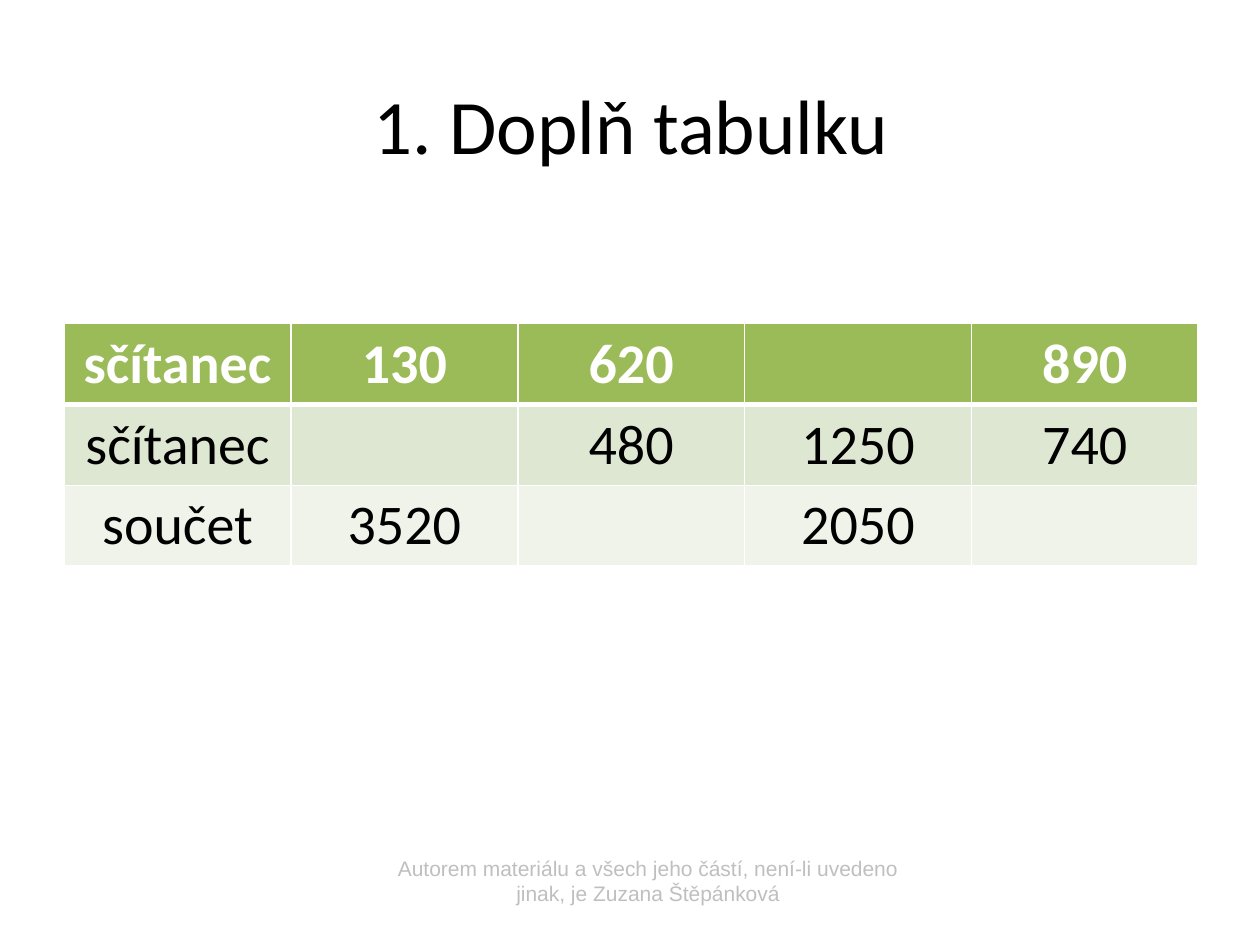
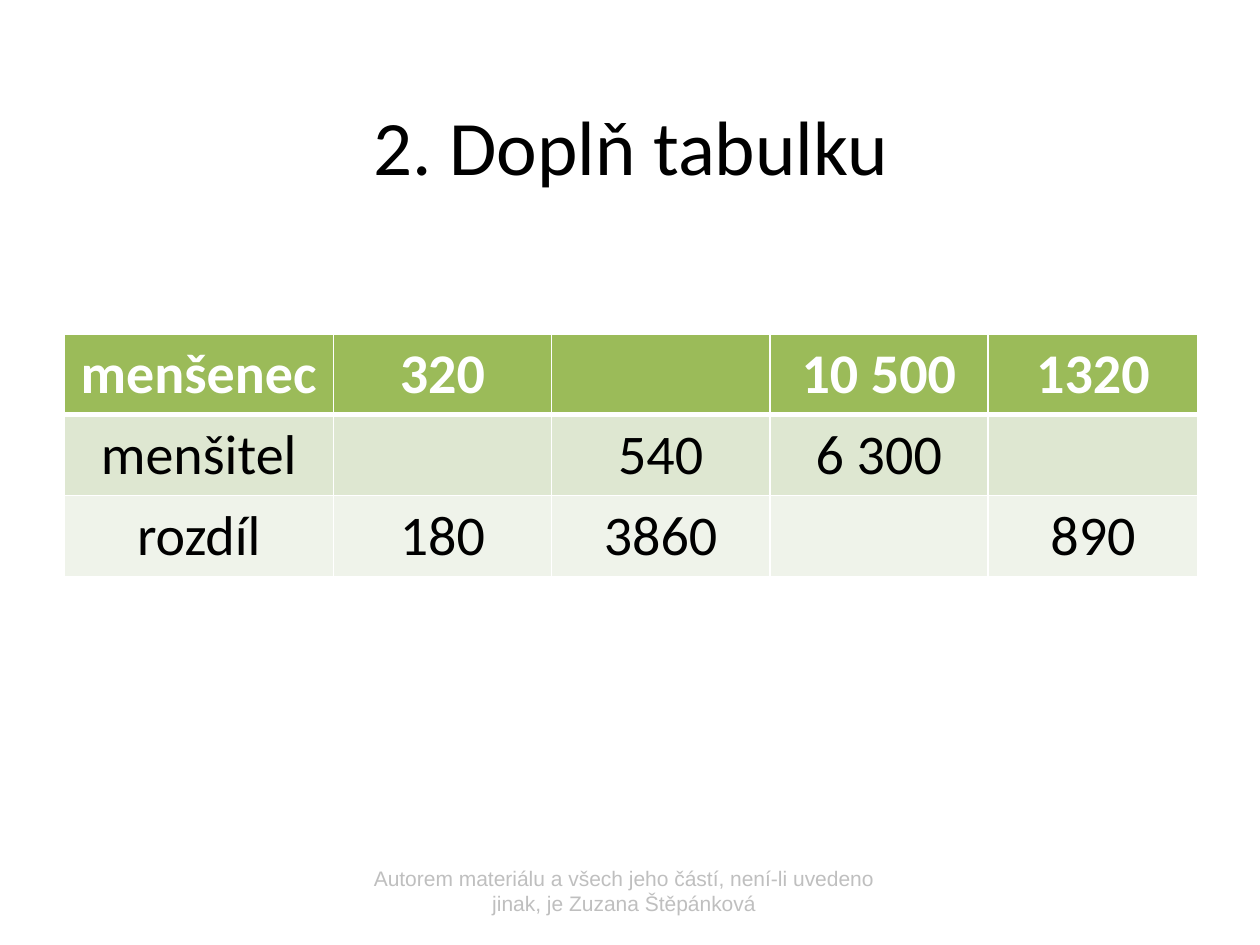
import pptx
import pptx.dml.color
import pptx.enum.text
import pptx.oxml
import pptx.oxml.ns
import pptx.util

Pt = pptx.util.Pt
PP_ALIGN = pptx.enum.text.PP_ALIGN
MSO_ANCHOR = pptx.enum.text.MSO_ANCHOR

LEFT, WIDTH = 36.7, 648
ROW_HEIGHT = 46.2
WHITE = "FFFFFF"
ROW_FILLS = ["9BBB59", "DEE7D1", "EFF3EA"]
TITLE = {"name": "Calibri", "size": Pt(44), "color": "000000"}
HEADER = {"name": "Calibri", "size": Pt(32), "bold": True, "color": WHITE}
BODY = {**HEADER, "bold": False, "color": "000000"}
FOOTER = {"name": "Arial", "size": Pt(12), "color": "BFBFBF"}
FOOTER_TEXT = ("Autorem materiálu a všech jeho částí, není-li uvedeno jinak, "
               "je Zuzana Štěpánková")


def rgb(value):
    return pptx.dml.color.RGBColor.from_string(value)


def write(tf, text, style):
    """Put one centred, formatted run in the text frame."""
    p = tf.paragraphs[0]
    p.alignment = PP_ALIGN.CENTER
    r = p.add_run()
    r.text = text
    for name, value in style.items():
        if name == "color":
            r.font.color.rgb = rgb(value)
        else:
            setattr(r.font, name, value)


def add_text(s, box, text, style, anchor=MSO_ANCHOR.TOP):
    tf = s.shapes.add_textbox(*map(Pt, box)).text_frame
    tf.word_wrap = True
    tf.vertical_anchor = anchor
    write(tf, text, style)


def add_border(cell, side, width):
    ns = pptx.oxml.ns.nsdecls("a")
    cell._tc.get_or_add_tcPr().append(pptx.oxml.parse_xml(
        f'<a:ln{side} {ns} w="{Pt(width)}"><a:solidFill>'
        f'<a:srgbClr val="{WHITE}"/></a:solidFill></a:ln{side}>'))


def add_number_table(s, top, widths, rows):
    """Draw the exercise table; an empty string is a cell to fill in."""
    table = s.shapes.add_table(len(rows), len(widths), Pt(LEFT), Pt(top),
                               Pt(WIDTH), Pt(ROW_HEIGHT * len(rows))).table
    for column, width in zip(table.columns, widths):
        column.width = Pt(width)
    for i, values in enumerate(rows):
        table.rows[i].height = Pt(ROW_HEIGHT)
        borders = {"L": 1, "R": 1, "T": 3 if i == 1 else 1, "B": 3 if i == 0 else 1}
        for j, value in enumerate(values):
            cell = table.cell(i, j)
            for side, width in borders.items():
                add_border(cell, side, width)
            cell.fill.solid()
            cell.fill.fore_color.rgb = rgb(ROW_FILLS[i])
            if value:
                write(cell.text_frame, value, BODY if i else HEADER)


def add_exercise(prs, title, title_top, table_top, widths, rows, footer_box):
    s = prs.slides.add_slide(prs.slide_layouts[6])
    add_text(s, (LEFT, title_top, WIDTH, 90), title, TITLE, MSO_ANCHOR.MIDDLE)
    add_number_table(s, table_top, widths, rows)
    add_text(s, footer_box, FOOTER_TEXT, FOOTER)


def main():
    prs = pptx.Presentation()
    prs.slide_width, prs.slide_height = Pt(720), Pt(540)
    add_exercise(prs, "1. Doplň tabulku", 25.9, 185, [WIDTH / 5] * 5, [
        ["sčítanec", "130", "620", "", "890"],
        ["sčítanec", "", "480", "1250", "740"],
        ["součet", "3520", "", "2050", ""],
    ], (206.6, 485.3, 327.6, 36))
    add_exercise(prs, "2. Doplň tabulku", 37.4, 190.8, [153.8, *[124.7] * 3, 120.1], [
        ["menšenec", "320", "", "10 500", "1320"],
        ["menšitel", "", "540", "6 300", ""],
        ["rozdíl", "180", "3860", "", "890"],
    ], (195.8, 491, 321.8, 36))
    prs.save("out.pptx")


if __name__ == "__main__":
    main()
